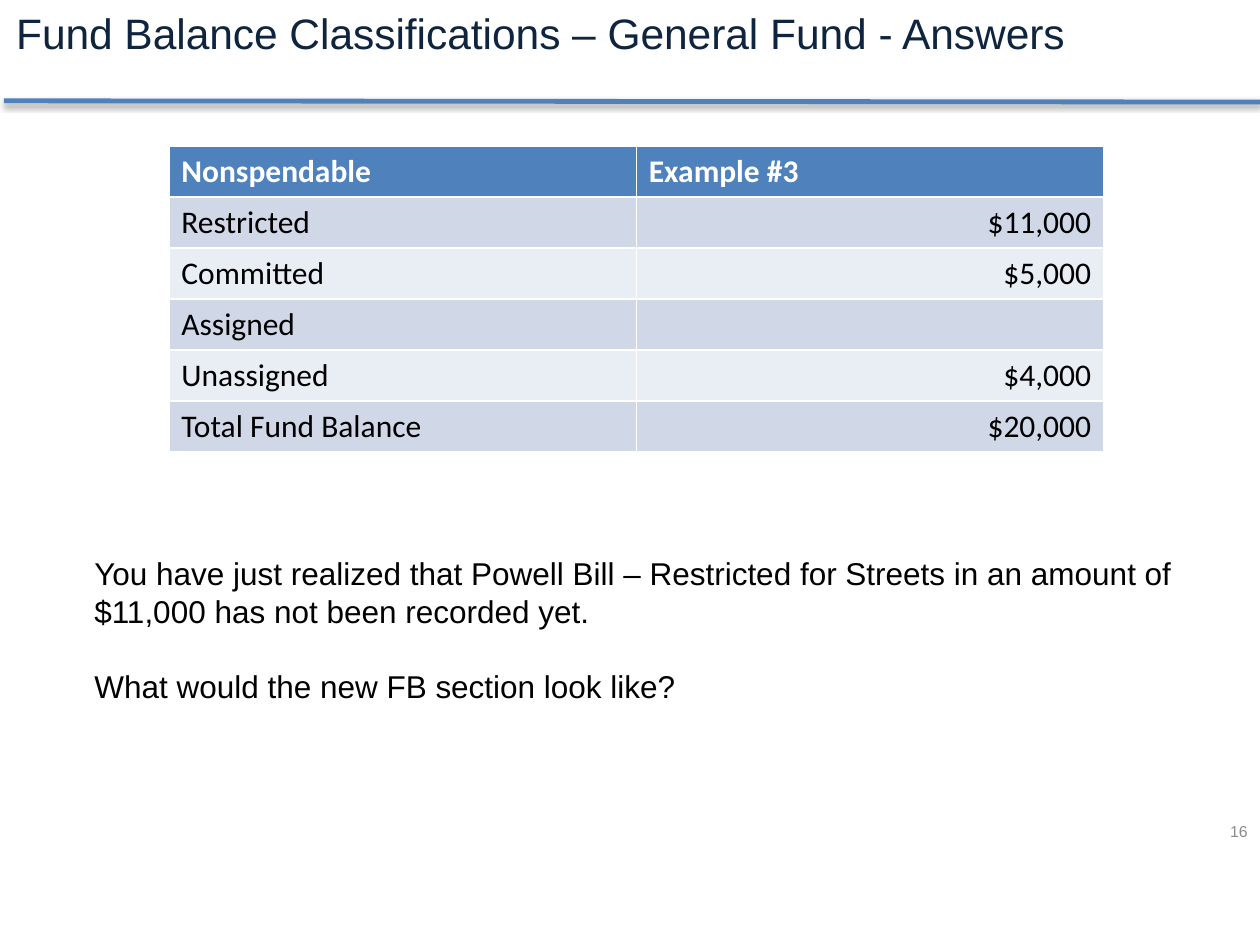
from lxml import etree
from pptx import Presentation
from pptx import util as u
from pptx.dml.color import RGBColor
from pptx.enum import shapes, text
from pptx.oxml import parse_xml
from pptx.oxml.ns import nsdecls
from pptx.util import Inches

COLORS = {
    "title": "0F243E",
    "accent": "4F81BD",
    "band_dark": "D0D8E8",
    "band_light": "E9EDF4",
    "white": "FFFFFF",
    "black": "000000",
    "number": "8C8C8C",
}
BALANCES = [
    ("Nonspendable", "Example #3"),
    ("Restricted", "$11,000"),
    ("Committed", "$5,000"),
    ("Assigned", ""),
    ("Unassigned", "$4,000"),
    ("Total Fund Balance", "$20,000"),
]
QUESTION = [
    "You have just realized that Powell Bill – Restricted for Streets "
    "in an amount of $11,000 has not been recorded yet.",
    "What would the new FB section look like?",
]


def color(name):
    return RGBColor.from_string(COLORS[name])


def style_runs(paragraph, font, size, color_name, bold=False):
    for run in paragraph.runs:
        run.font.name = font
        run.font.size = u.Pt(size)
        run.font.bold = bold
        run.font.color.rgb = color(color_name)


def add_text(slide, box, lines, size, color_name, align=text.PP_ALIGN.LEFT,
             anchor=text.MSO_ANCHOR.TOP, gap=0):
    """Place Arial paragraphs in box, with gap points between them."""
    frame = slide.shapes.add_textbox(*map(Inches, box)).text_frame
    frame.word_wrap = True
    frame.vertical_anchor = anchor
    frame.text = "\n".join(lines)
    for index, paragraph in enumerate(frame.paragraphs):
        paragraph.alignment = align
        if index:
            paragraph.space_before = u.Pt(gap)
        style_runs(paragraph, "Arial", size, color_name)


def add_header(slide, left, top, width):
    rule_top = top + 0.77
    rule = slide.shapes.add_connector(
        shapes.MSO_CONNECTOR.STRAIGHT, Inches(left), Inches(rule_top),
        Inches(left + width), Inches(rule_top + 0.01))
    rule.line.color.rgb = color("accent")
    rule.line.width = u.Pt(2.75)
    effects = parse_xml(f"<a:effectLst {nsdecls('a')}/>")
    shadow = etree.SubElement(
        effects, "{%s}outerShdw" % effects.nsmap["a"],
        blurRad=str(u.Pt(3.1)), dist=str(u.Pt(1.6)), dir="5400000", rotWithShape="0")
    shadow.append(parse_xml(
        f'<a:srgbClr {nsdecls("a")} val="{COLORS["black"]}"><a:alpha val="38000"/></a:srgbClr>'))
    rule.element.spPr.append(effects)
    add_text(slide, (left, top, width, 0.46),
             ["Fund Balance Classifications – General Fund - Answers"],
             24.3, "title", anchor=text.MSO_ANCHOR.MIDDLE)


def add_balance_table(slide, left, top, width, height):
    """White cell borders come from the default table style."""
    table = slide.shapes.add_table(
        len(BALANCES), 2, *map(Inches, (left, top, width, height))).table
    for row, values in enumerate(BALANCES):
        header = row == 0
        band = "accent" if header else "band_dark" if row % 2 else "band_light"
        for column, value in enumerate(values):
            cell = table.cell(row, column)
            cell.fill.solid()
            cell.fill.fore_color.rgb = color(band)
            cell.text = value
            paragraph = cell.text_frame.paragraphs[0]
            if column and not header:
                paragraph.alignment = text.PP_ALIGN.RIGHT
            style_runs(paragraph, "Calibri", 18, "white" if header else "black", header)


def main():
    presentation = Presentation()
    presentation.slide_width = Inches(10)
    presentation.slide_height = Inches(7.5)
    slide = presentation.slides.add_slide(presentation.slide_layouts[6])
    add_header(slide, 0.03, 0.03, 9.97)
    add_balance_table(slide, 1.34, 1.16, 7.42, 2.43)
    add_text(slide, (8.76, 6.4, 1.24, 0.4), ["16"], 9, "number",
             align=text.PP_ALIGN.RIGHT, anchor=text.MSO_ANCHOR.MIDDLE)
    add_text(slide, (0.65, 4.35, 8.82, 1.31), QUESTION, 18, "black", gap=21)
    presentation.save("out.pptx")


if __name__ == "__main__":
    main()
